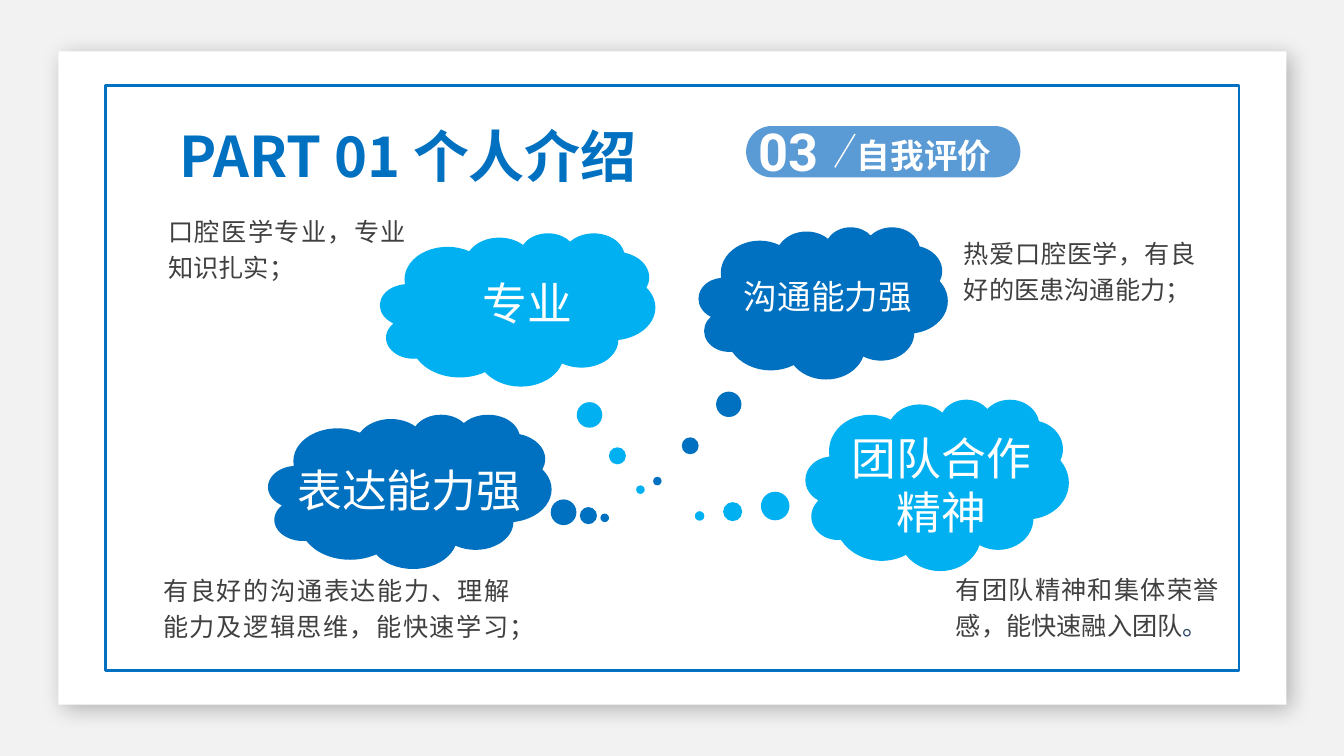
from lxml import etree
from pptx import Presentation
from pptx.dml.color import RGBColor
from pptx.enum.shapes import MSO_CONNECTOR as Link, MSO_SHAPE as Kind
from pptx.enum.text import MSO_ANCHOR as Anchor, MSO_AUTO_SIZE as Fit, PP_ALIGN as Align
from pptx.oxml import parse_xml
from pptx.oxml.ns import nsdecls, qn
from pptx.util import Inches, Pt

SANS = "Noto Sans CJK SC"
WHITE, BLUE, SKY, GREY = "FFFFFF", "0070C0", "00B0F0", "404040"


def tint(text):
    """Return the colour for a hex string."""
    return RGBColor.from_string(text)


def place(box):
    """Turn a box in inches into lengths."""
    return [Inches(n) for n in box]


def style(frame, size, color, bold=False, face=SANS, lead=1, align=Align.LEFT):
    """Format the first paragraph of a frame."""
    para = frame.paragraphs[0]
    para.alignment = align
    para.line_spacing = Pt(round(size * 1.19 * lead, 1))
    font = para.font
    font.size, font.bold, font.name = Pt(size), bold, face
    font.color.rgb = tint(color)
    etree.SubElement(font._rPr, qn("a:ea")).set("typeface", face)


def write(shapes, box, text, size, color, wrap=False, inset=True, **look):
    """Add a text box and return its frame."""
    frame = shapes.add_textbox(*place(box)).text_frame
    frame.text = text
    frame.word_wrap = wrap
    frame.auto_size = Fit.SHAPE_TO_FIT_TEXT
    if not inset:
        frame.margin_left = frame.margin_right = 0
        frame.margin_top = frame.margin_bottom = 0
    style(frame, size, color, **look)
    return frame


def draw(shapes, kind, box, fill=None, line=None):
    """Add a preset shape with plain fill and line."""
    shape = shapes.add_shape(kind, *place(box))
    shape.shadow.inherit = False
    if fill:
        shape.fill.solid()
        shape.fill.fore_color.rgb = tint(fill)
    else:
        shape.fill.background()
    if line:
        shape.line.color.rgb = tint(line)
        shape.line.width = Pt(2)
    else:
        shape.line.fill.background()
    return shape


def card(shapes, box):
    """Draw the white card and its blue frame."""
    x, y, w, h = box
    panel = draw(shapes, Kind.RECTANGLE, box, WHITE)
    glow = panel._element.spPr.find(qn("a:effectLst"))
    glow.append(parse_xml(
        f'<a:outerShdw {nsdecls("a")} blurRad="{Pt(16)}" dist="{Pt(5)}" dir="2700000" '
        'algn="tl" rotWithShape="0"><a:srgbClr val="000000"><a:alpha val="25000"/>'
        '</a:srgbClr></a:outerShdw>'))
    draw(shapes, Kind.RECTANGLE, (x + 0.47, y + 0.34, w - 0.94, h - 0.68), line=BLUE)


def head(slide, box):
    """Fill the title and bring it to the front."""
    title = slide.shapes.title
    title.left, title.top, title.width, title.height = place(box)
    frame = title.text_frame
    frame.text = "PART 01 个人介绍"
    frame.word_wrap = True
    frame.auto_size = Fit.SHAPE_TO_FIT_TEXT
    frame.vertical_anchor = Anchor.TOP
    style(frame, 40, BLUE, bold=True, lead=1.5)
    slide.shapes._spTree.append(title._element)


def badge(shapes, box):
    """Draw the numbered section pill."""
    x, y, w, h = box
    parts = shapes.add_group_shape().shapes
    pill = draw(parts, Kind.ROUNDED_RECTANGLE, box, "5B9BD5")
    pill.adjustments[0] = 0.5
    write(parts, (x + 0.02, y - 0.11, 0.86, 0.73), "03", 37.4, WHITE, bold=True, face="Roboto")
    slash = parts.add_connector(
        Link.STRAIGHT, *place((x + 1.08, y + 0.08, x + 0.88, y + 0.41)))
    slash.line.color.rgb = tint(WHITE)
    slash.line.width = Pt(1)
    etree.SubElement(slash._element.spPr, qn("a:effectLst"))
    write(parts, (x + 1, y - 0.16, 1.63, 0.71), "自我评价", 24, WHITE, bold=True, lead=1.5)


def cloud(shapes, box, tail, fill, label, inner, size, **look):
    """Draw a cloud with its label at an offset inside it."""
    x, y, w, h = box
    dx, dy, wide, high = inner
    parts = shapes.add_group_shape().shapes
    shape = draw(parts, Kind.CLOUD_CALLOUT, box, fill)
    for i, n in enumerate(tail):
        shape.adjustments[i] = n
    write(parts, (x + dx, y + dy, wide, high), label, size, WHITE, **look)


def note(shapes, box, text):
    """Add a justified remark and return its paragraph."""
    frame = write(shapes, box, text, 18, GREY, wrap=True, inset=False,
                  lead=1.2, align=Align.JUSTIFY)
    return frame.paragraphs[0]


def main():
    """Build the slide and save it."""
    deck = Presentation()
    deck.slide_width, deck.slide_height = Inches(13.33), Inches(7.5)
    slide = deck.slides.add_slide(deck.slide_layouts[5])
    back = slide.background.fill
    back.solid()
    back.fore_color.rgb = tint("F2F2F2")
    shapes = slide.shapes
    card(shapes, (0.58, 0.51, 12.18, 6.48))
    badge(shapes, (7.4, 1.25, 2.72, 0.51))

    team = note(shapes, (9.48, 5.64, 2.61, 0.73), "有团队精神和集体荣誉感，能快速融入团队")
    stop = team.add_run()
    stop.text = "。"
    stop.font.color.rgb = tint("244061")
    note(shapes, (9.56, 2.31, 2.3, 0.73), "热爱口腔医学，有良好的医患沟通能力；")
    note(shapes, (1.67, 2.09, 2.36, 0.73), "口腔医学专业，专业知识扎实；")
    note(shapes, (1.62, 5.65, 3.44, 0.73), "有良好的沟通表达能力、理解能力及逻辑思维，能快速学习；")

    cloud(shapes, (3.77, 2.31, 2.73, 1.52), (0.446, 1.176), SKY,
          "专业", (0.92, 0.38, 1.15, 0.64), 32)
    cloud(shapes, (2.66, 4.11, 2.81, 1.53), (0.688, 0.172), BLUE,
          "表达能力强", (0.19, 0.44, 2.52, 0.64), 32)
    cloud(shapes, (6.93, 2.25, 2.47, 1.51), (-0.666, 1.171), BLUE,
          "沟通能力强", (0.35, 0.44, 1.95, 0.5), 24)
    cloud(shapes, (7.99, 3.96, 2.61, 1.7), (-0.903, 0.182), SKY,
          "团队合作精神", (0.2, 0.27, 2.3, 1.18), 32, wrap=True, align=Align.CENTER)
    head(slide, (1.68, 0.83, 5.6, 1.11))
    deck.save("out.pptx")


if __name__ == "__main__":
    main()
